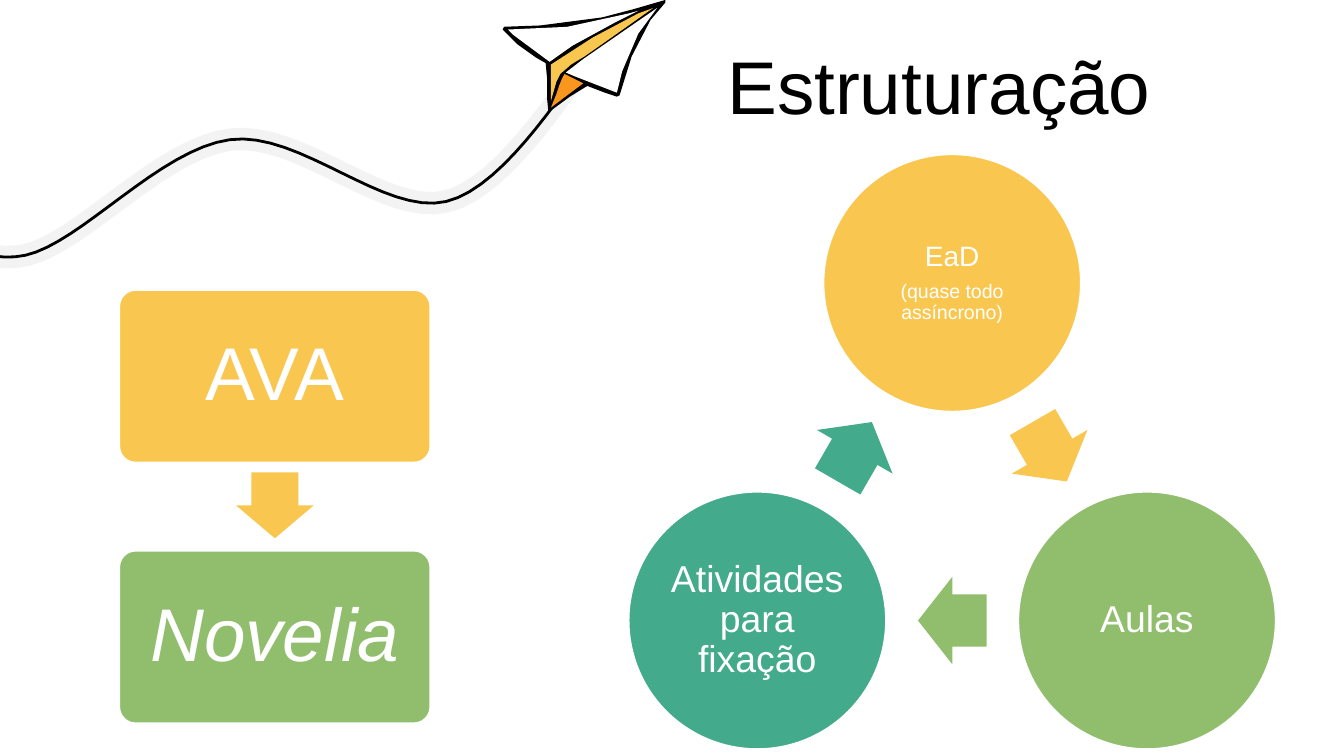
import math

from pptx import Presentation
from pptx.dml.color import RGBColor
from pptx.enum.shapes import MSO_SHAPE
from pptx.enum.text import MSO_ANCHOR, PP_ALIGN
from pptx.util import Emu, Pt

ELLIPSE = MSO_SHAPE.OVAL
ROUNDED = MSO_SHAPE.ROUNDED_RECTANGLE
ARROW = MSO_SHAPE.RIGHT_ARROW
CENTER = PP_ALIGN.CENTER
TOP, MIDDLE = MSO_ANCHOR.TOP, MSO_ANCHOR.MIDDLE

PX = 9144  # EMU per px, 100 px to the inch
FONT = "Arial"
COLORS = {
    "black": "000000",
    "white": "FFFFFF",
    "gray": "F3F3F3",
    "yellow": "F9C74F",
    "orange": "F8961E",
    "green": "90BE6D",
    "teal": "43AA8B",
}


def px(value):
    return Emu(round(value * PX))


def color(name):
    return RGBColor.from_string(COLORS[name])


def write(frame, lines, ink="white", anchor=MIDDLE, margin=2,
          spacing=0.9, after=0.35, italic=False):
    """Fill a text frame with centred (text, size) lines."""
    frame.word_wrap = True
    frame.vertical_anchor = anchor
    frame.margin_left = frame.margin_right = px(margin)
    frame.margin_top = frame.margin_bottom = px(margin)
    for index, (text, size) in enumerate(lines):
        para = frame.add_paragraph() if index else frame.paragraphs[0]
        para.alignment = CENTER
        para.line_spacing = spacing
        para.space_after = Pt(round(size * after))
        span = para.add_run()
        span.text = text
        span.font.name = FONT
        span.font.size = Pt(size)
        span.font.italic = italic
        span.font.color.rgb = color(ink)


def smooth(points, steps=16):
    """Sample a chain of cubic curves: a start, then two controls and an end each."""
    result = [points[0]]
    for first in range(0, len(points) - 1, 3):
        a, b, c, d = points[first:first + 4]
        for step in range(1, steps + 1):
            t = step / steps
            u = 1 - t
            weights = (u ** 3, 3 * u * u * t, 3 * u * t * t, t ** 3)
            result.append(tuple(
                sum(weight * point[axis] for weight, point in zip(weights, (a, b, c, d)))
                for axis in (0, 1)))
    return result


class SlideBuilder:
    def __init__(self, page):
        self.page = page

    def style(self, shape, fill=None, line=None, width=2):
        shape.shadow.inherit = False
        if fill:
            shape.fill.solid()
            shape.fill.fore_color.rgb = color(fill)
        else:
            shape.fill.background()
        if line:
            shape.line.color.rgb = color(line)
            shape.line.width = Pt(width)
        else:
            shape.line.fill.background()

    def title(self, x, y, w, h, text):
        box = self.page.shapes.add_textbox(px(x), px(y), px(w), px(h))
        write(box.text_frame, [(text, 40)], ink="black", anchor=TOP,
              margin=10, spacing=1.0, after=0)

    def node(self, kind, x, y, w, h, fill, lines, margin, italic=False):
        shape = self.page.shapes.add_shape(kind, px(x), px(y), px(w), px(h))
        if kind == ROUNDED:
            shape.adjustments[0] = 0.1
        self.style(shape, fill, "white")
        write(shape.text_frame, lines, margin=margin, italic=italic)

    def arrow(self, center_x, center_y, w, h, angle, fill):
        shape = self.page.shapes.add_shape(
            ARROW, px(center_x - w / 2), px(center_y - h / 2), px(w), px(h))
        shape.adjustments[0], shape.adjustments[1] = 0.6, 0.5
        shape.rotation = angle
        self.style(shape, fill)

    def outline(self, points, fill=None, line=None, width=2):
        first, *rest = [(px(x), px(y)) for x, y in points]
        builder = self.page.shapes.build_freeform(*first, scale=1.0)
        builder.add_line_segments(rest, close=fill is not None)
        self.style(builder.convert_to_shape(), fill, line, width)


# Flight trail and paper plane
TRAIL = [(-75, 157), (-59, 162), (-22, 199), (19, 190), (60, 181), (119, 111), (171, 104),
         (223, 97), (286, 161), (332, 150), (378, 139), (426, 55), (444, 36)]
PLANE = [
    # silhouette
    ("black", [(495, 0), (471, 7), (448, 13), (402, 19), (375, 20), (374, 22), (385, 33),
               (399, 43), (406, 47), (407, 58), (407, 73), (408, 83), (409, 83), (424, 72),
               (437, 64), (450, 69), (459, 72), (461, 71), (470, 42), (484, 15), (495, 2)]),
    # left wing
    ("white", [(475, 8), (459, 16), (426, 34), (409, 46), (382, 26), (378, 22), (422, 20),
               (468, 10)]),
    # fold
    ("yellow", [(486, 6), (475, 10), (441, 28), (410, 48), (410, 75), (414, 61), (417, 55),
                (425, 48), (435, 42), (455, 28)]),
    # flap
    ("orange", [(420, 55), (418, 59), (416, 64), (414, 70), (410, 80), (422, 71), (434, 62)]),
    # right wing
    ("white", [(489, 6), (473, 17), (434, 44), (421, 54), (428, 57), (459, 69), (463, 53),
               (475, 25)]),
]

# Cycle steps: fill, lines, margin
CYCLE = [
    ("yellow", [("EaD", 15), ("(quase todo assíncrono)", 10.5)], 2),
    ("green", [("Aulas", 20)], 3),
    ("teal", [("Atividades para fixação", 20)], 3),
]
CYCLE_X, CYCLE_Y, RADIUS, CIRCLE = 708.5, 378, 167.4, 193


def main():
    deck = Presentation()
    deck.slide_width, deck.slide_height = px(1000), px(562.5)
    slide = SlideBuilder(deck.slides.add_slide(deck.slide_layouts[6]))

    slide.title(386, 20, 625, 63, "Estruturação")

    trail = smooth(TRAIL)
    for line, width in (("gray", 12), ("black", 1.5)):
        slide.outline(trail, line=line, width=width)
    for fill, points in PLANE:
        slide.outline(points, fill=fill)

    # Cycle: circles at equal angles, an arrow halfway to each next one
    for index, (fill, lines, margin) in enumerate(CYCLE):
        turn = math.radians(120 * index - 90)
        slide.node(ELLIPSE, CYCLE_X + RADIUS * math.cos(turn) - CIRCLE / 2,
                   CYCLE_Y + RADIUS * math.sin(turn) - CIRCLE / 2,
                   CIRCLE, CIRCLE, fill, lines, margin)
        middle = turn + math.radians(60)
        slide.arrow(CYCLE_X + RADIUS / 2 * math.cos(middle),
                    CYCLE_Y + RADIUS / 2 * math.sin(middle),
                    51, 65, 60 + 120 * index, fill)

    # Platform steps
    slide.node(ROUNDED, 88, 215, 233, 130, "yellow", [("AVA", 40)], 17)
    slide.arrow(204.5, 376, 49, 58, 90, "yellow")
    slide.node(ROUNDED, 88, 409, 233, 130, "green", [("Novelia", 40)], 17, italic=True)

    deck.save("out.pptx")


if __name__ == "__main__":
    main()
